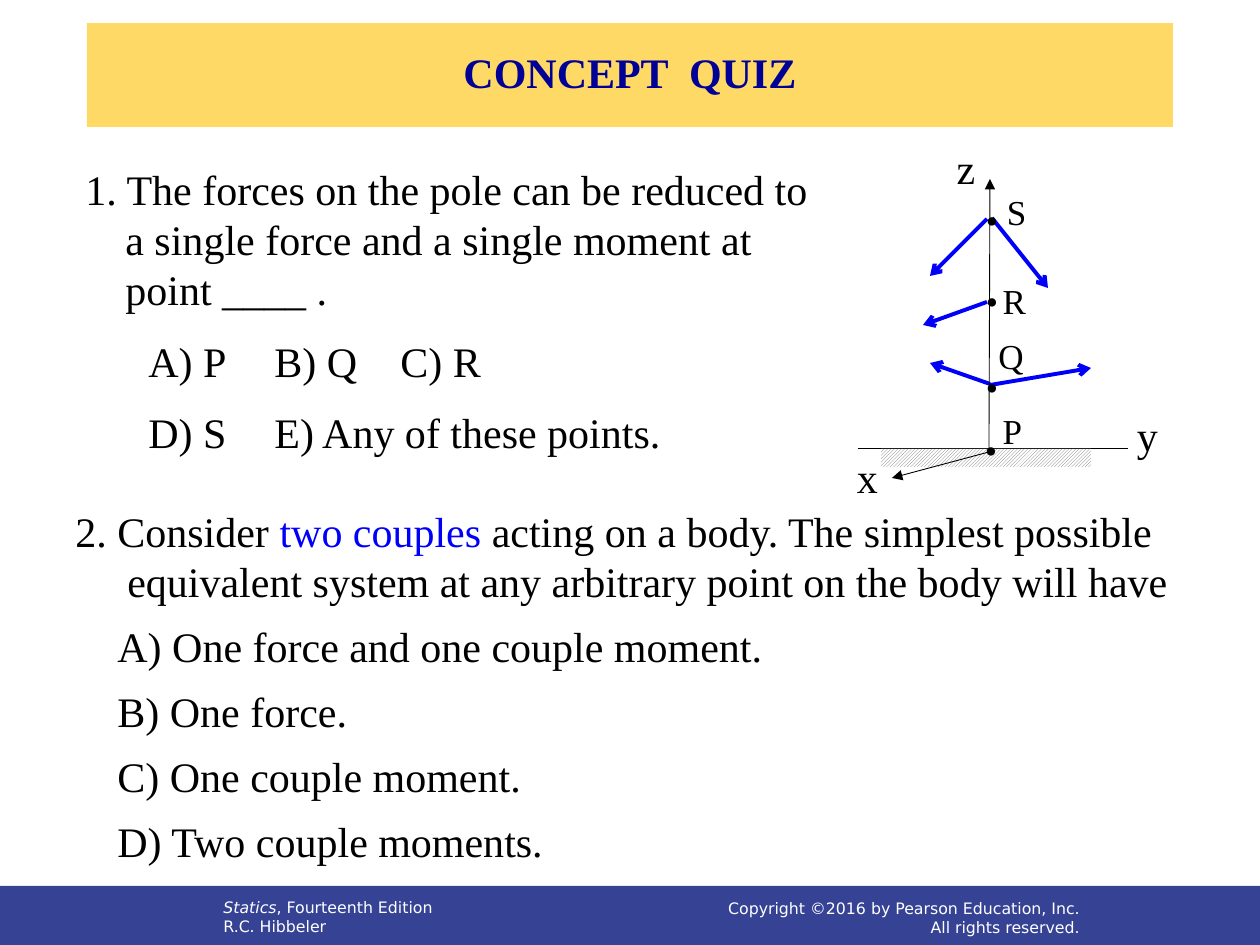
from lxml import etree
from pptx import Presentation
from pptx import util as u
from pptx.dml import color
from pptx.enum import dml, shapes, text
from pptx.oxml import ns

SCALE = 914400 / 126  # EMU per px
COLORS = {"black": "000000", "white": "FFFFFF", "blue": "0000FA", "navy": "000096",
          "gold": "FFD966", "footer": "364395", "hatch": "767171"}
SERIF, SANS = "Times New Roman", "DejaVu Sans"
LEFT, CENTER, RIGHT = text.PP_ALIGN.LEFT, text.PP_ALIGN.CENTER, text.PP_ALIGN.RIGHT


def px(n):
    return u.Emu(round(n * SCALE))


def rgb(name):
    return color.RGBColor.from_string(COLORS[name])


class Painter:
    def __init__(self, s):
        self.s = s

    def rect(self, x, y, w, h, fill=None):
        """Add a borderless rectangle, hatched when no fill is named."""
        sp = self.s.shapes.add_shape(shapes.MSO_SHAPE.RECTANGLE, px(x), px(y), px(w), px(h))
        sp.shadow.inherit = False
        sp.line.fill.background()
        if fill:
            sp.fill.solid()
            sp.fill.fore_color.rgb = rgb(fill)
        else:
            sp.fill.patterned()
            sp.fill.pattern = dml.MSO_PATTERN.LIGHT_UPWARD_DIAGONAL
            sp.fill.fore_color.rgb = rgb("hatch")
            sp.fill.back_color.rgb = rgb("white")
        return sp

    def box(self, x, y, w, h, wrap=True):
        tf = self.s.shapes.add_textbox(px(x), px(y), px(w), px(h)).text_frame
        tf.word_wrap = wrap
        return tf

    def style(self, r, size=24, font=SERIF, fill="black"):
        r.font.size = u.Pt(size)
        r.font.name = font
        r.font.color.rgb = rgb(fill)

    def add_run(self, p, content, *look):
        r = p.add_run()
        r.text = content
        self.style(r, *look)
        return r

    def para(self, p, content, size=24, font=SERIF, fill="black", align=LEFT,
             before=0, hang=0, margin=0, tabs=()):
        p.text = content
        p.alignment = align
        if before:
            p.space_before = u.Pt(before)
        pPr = p._p.get_or_add_pPr()
        pPr.set("marL", str(px(margin)))
        pPr.set("indent", str(px(-hang)))
        if tabs:
            tab_list = etree.SubElement(pPr, ns.qn("a:tabLst"))
            for pos in tabs:
                etree.SubElement(tab_list, ns.qn("a:tab"), pos=str(px(pos)), algn="l")
        for r in p.runs:
            self.style(r, size, font, fill)

    def label(self, content, x, y, w, h, size):
        tf = self.box(x, y, w, h, wrap=False)
        self.para(tf.paragraphs[0], content, size, align=CENTER)

    def line(self, start, end, fill="black", width=0.5, head=None):
        c = self.s.shapes.add_connector(shapes.MSO_CONNECTOR.STRAIGHT,
                                        *map(px, start + end))
        c.line.color.rgb = rgb(fill)
        c.line.width = u.Pt(width)
        spPr = c._element.spPr
        if head:
            etree.SubElement(spPr.get_or_add_ln(), ns.qn("a:tailEnd"), type=head)
        etree.SubElement(spPr, ns.qn("a:effectLst"))


def add_footer(d):
    d.rect(-1, 886, 1262, 60, "footer")
    book = d.box(211, 892, 776, 50)
    title = book.paragraphs[0]
    d.add_run(title, "Statics", 9, SANS, "white").font.italic = True
    d.add_run(title, ", Fourteenth Edition", 9, SANS, "white")
    d.para(book.add_paragraph(), "R.C. Hibbeler", 9, SANS, "white")

    rights = d.box(588, 891, 504, 54)
    rights.vertical_anchor = text.MSO_ANCHOR.MIDDLE
    d.para(rights.paragraphs[0], "Copyright ©2016 by Pearson Education, Inc.",
           9, SANS, "white", RIGHT)
    d.para(rights.add_paragraph(), "All rights reserved.", 9, SANS, "white", RIGHT)


def add_title(d):
    tf = d.rect(87, 23, 1086, 104, "gold").text_frame
    tf.vertical_anchor = text.MSO_ANCHOR.MIDDLE
    p = tf.paragraphs[0]
    d.para(p, "CONCEPT  QUIZ", fill="navy", align=CENTER)
    p.line_spacing = 0.9
    p.runs[0].font.bold = True


def add_questions(d):
    tf = d.box(63, 499, 1134, 389)
    p = tf.paragraphs[0]
    d.para(p, "2. Consider ", hang=52, margin=52)
    d.add_run(p, "two couples ", 24, SERIF, "blue")
    d.add_run(p, "acting on a body. The simplest possible equivalent system "
              "at any arbitrary point on the body will have")
    for option in ("A) One force and one couple moment.", "B) One force.",
                   "C) One couple moment.", "D) Two couple moments."):
        d.para(tf.add_paragraph(), option, before=8.4, margin=42)

    tf = d.box(73, 157, 756, 315)
    d.para(tf.paragraphs[0], "1. The forces on the pole can be reduced to a single force "
           "and a single moment at point ____ .", hang=40, margin=40)
    for options in ("\tA) P\tB) Q\tC) R", "\tD) S\tE) Any of these points."):
        d.para(tf.add_paragraph(), options, before=12, tabs=(50, 177, 418))


def add_pole(d):
    for start, end in (((990, 384), (930, 363)), ((990, 385), (1091, 368)),
                       ((987, 302), (923, 325)), ((992, 218), (1048, 288)),
                       ((987, 219), (930, 276))):
        d.line(start, end, "blue", 2.25, "arrow")
    d.line((858, 448), (1128, 448))
    d.line((989, 451), (990, 179), head="triangle")
    d.rect(881, 449, 210, 18)
    d.line((989, 452), (892, 478), head="triangle")
    for x, y in ((970, 422), (971, 359), (971, 273), (971, 192)):
        d.label("•", x, y, 42, 50, 20)
    for name, x, y, w in (("P", 990, 403, 45), ("Q", 985, 328, 52),
                          ("R", 990, 273, 49), ("S", 994, 184, 45)):
        d.label(name, x, y, w, 55, 20)
    for axis, x, y, w in (("y", 1124, 403, 47), ("z", 944, 136, 44), ("x", 844, 445, 47)):
        d.label(axis, x, y, w, 63, 24)


def main():
    prs = Presentation()
    prs.slide_width, prs.slide_height = px(1260), px(945)
    d = Painter(prs.slides.add_slide(prs.slide_layouts[6]))
    add_footer(d)
    add_title(d)
    add_questions(d)
    add_pole(d)
    prs.save("out.pptx")


if __name__ == "__main__":
    main()
